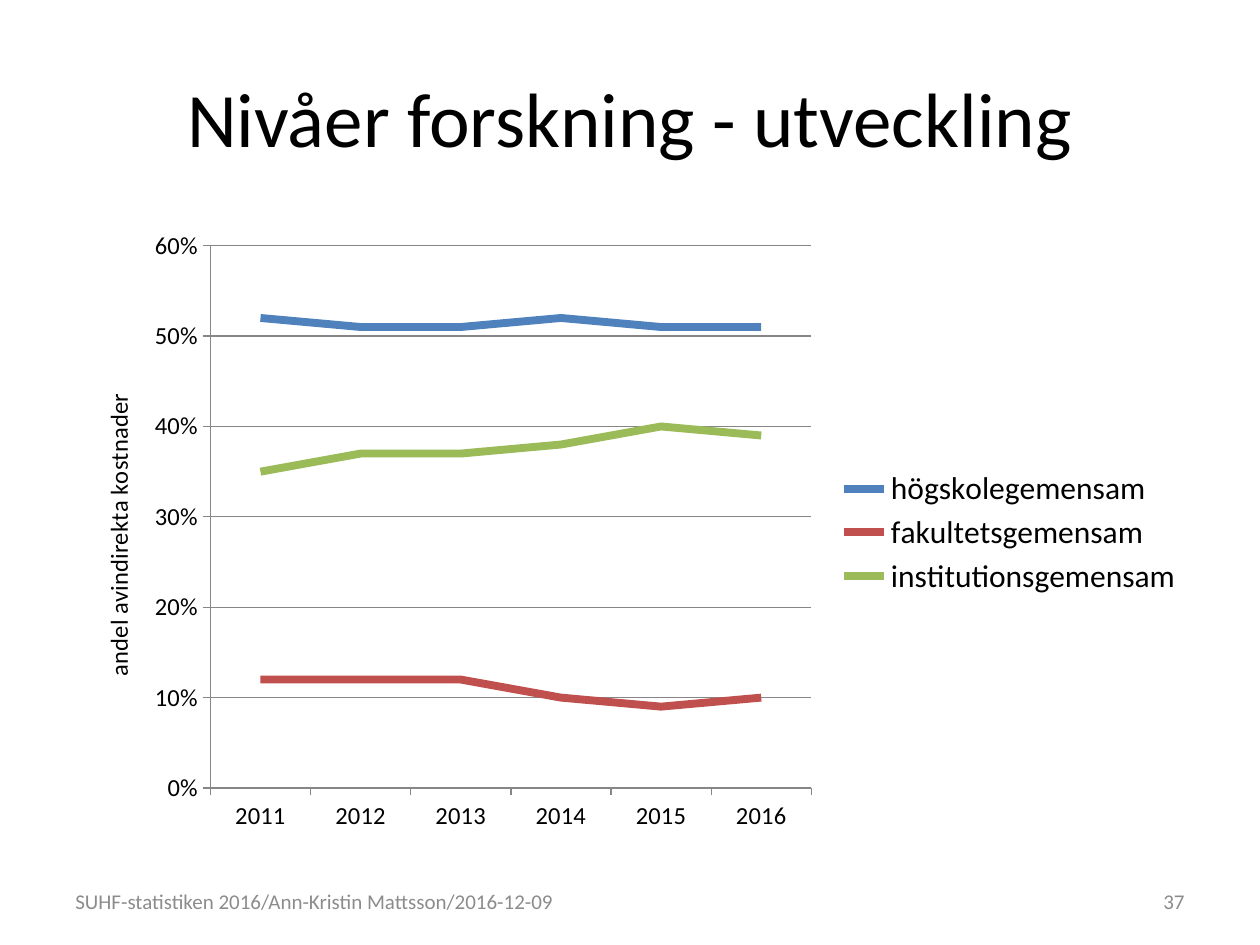
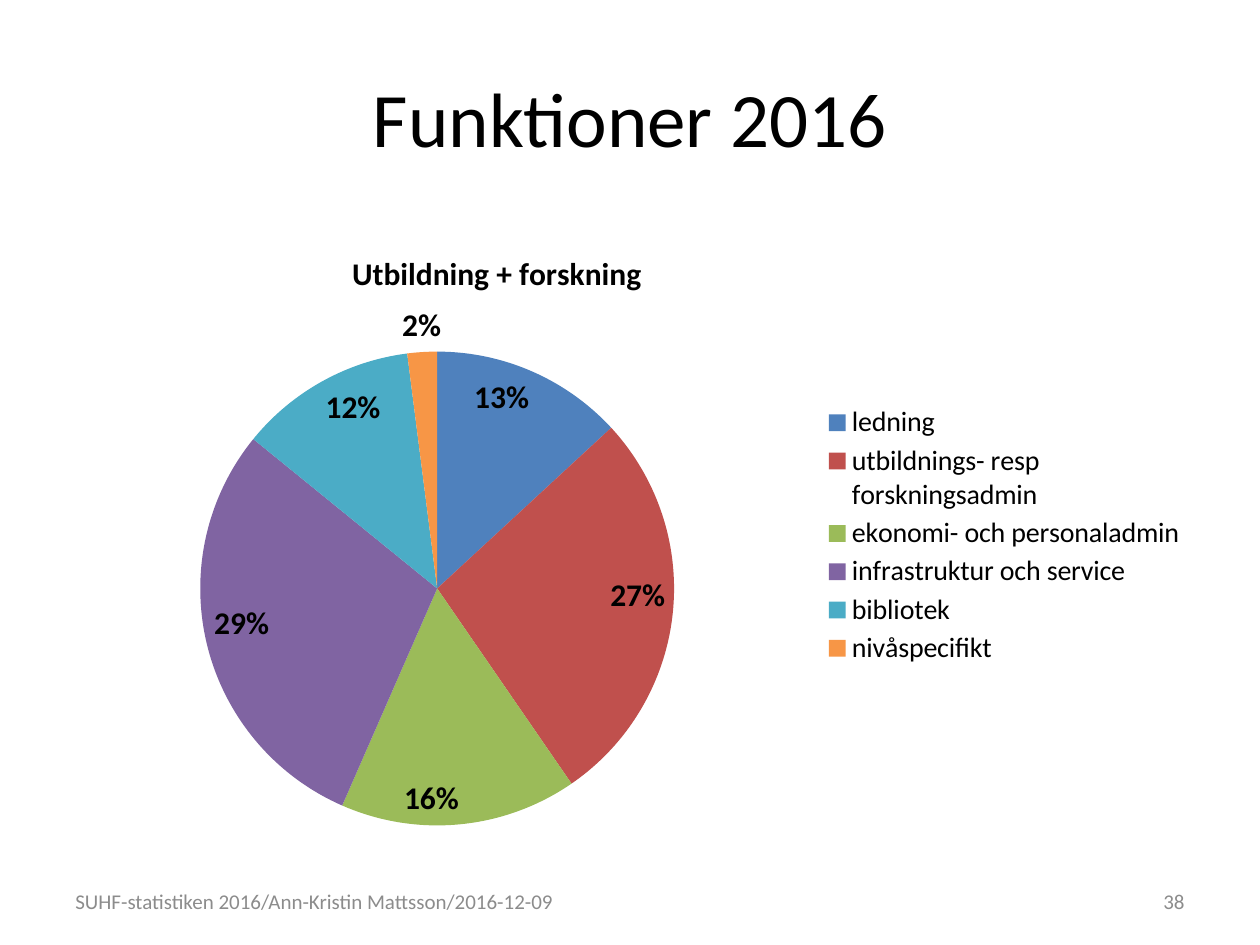
import pptx
import pptx.chart.data
import pptx.dml.color
import pptx.enum.chart
import pptx.enum.text
import pptx.oxml
import pptx.oxml.ns
import pptx.util
from dataclasses import dataclass

Cm, Pt = pptx.util.Cm, pptx.util.Pt
RGB = pptx.dml.color.RGBColor.from_string
XL = pptx.enum.chart
ALIGN = pptx.enum.text.PP_ALIGN


@dataclass(frozen=True)
class Theme:
    font: str = "Calibri"
    text: str = "000000"
    muted: str = "8C8C8C"
    grid: str = "868686"
    accents: tuple = ("4F81BD", "C0504D", "9BBB59", "8064A2", "4BACC6", "F79646")
    title: int = 44
    footer: int = 12
    axis: int = 14
    pie_legend: int = 16
    chart_text: int = 18


THEME = Theme()
FOOTER = "SUHF-statistiken 2016/Ann-Kristin Mattsson/2016-12-09"
FIRST_NUMBER = 37

LEVELS = {
    "title": "Nivåer forskning - utveckling",
    "axis_title": "andel avindirekta kostnader",
    "cats": ["2011", "2012", "2013", "2014", "2015", "2016"],
    "series": [
        ("högskolegemensam", [0.52, 0.51, 0.51, 0.52, 0.51, 0.51]),
        ("fakultetsgemensam", [0.12, 0.12, 0.12, 0.1, 0.09, 0.1]),
        ("institutionsgemensam", [0.35, 0.37, 0.37, 0.38, 0.4, 0.39]),
    ],
}
FUNCTIONS = {
    "title": "Funktioner 2016",
    "chart_title": "Utbildning + forskning",
    "cats": ["ledning", "utbildnings- resp forskningsadmin", "ekonomi- och personaladmin",
             "infrastruktur och service", "bibliotek", "nivåspecifikt"],
    "series": [("Series 1", [13, 27, 16, 29, 12, 2])],
}

WIDTH, HEIGHT = 25.4, 19.05
MARGIN = 1.27
BODY = WIDTH - 2 * MARGIN
NUMBER_WIDTH = 5.92
FOOTER_TOP, FOOTER_HEIGHT = 17.65, 1.02


def add_text(s, text, box, size, color, align):
    tf = s.shapes.add_textbox(*map(Cm, box)).text_frame
    tf.word_wrap = True
    tf.vertical_anchor = pptx.enum.text.MSO_ANCHOR.MIDDLE
    p = tf.paragraphs[0]
    p.text = text
    p.alignment = align
    style_font(p.font, size, color)


def style_font(font, size, color=THEME.text, bold=False):
    font.name = THEME.font
    font.size = Pt(size)
    font.bold = bold
    font.color.rgb = RGB(color)


def add_slide(prs, title, number):
    s = prs.slides.add_slide(prs.slide_layouts[6])
    add_text(s, title, (MARGIN, 0.76, BODY, 3.18), THEME.title, THEME.text, ALIGN.CENTER)
    add_text(s, FOOTER, (MARGIN, FOOTER_TOP, 14.63, FOOTER_HEIGHT),
             THEME.footer, THEME.muted, ALIGN.LEFT)
    add_text(s, str(number), (WIDTH - MARGIN - NUMBER_WIDTH, FOOTER_TOP, NUMBER_WIDTH, FOOTER_HEIGHT),
             THEME.footer, THEME.muted, ALIGN.RIGHT)
    return s


def place(element, index, x, y, w=None, h=None, inner=False):
    for old in element.findall(pptx.oxml.ns.qn("c:layout")):
        element.remove(old)
    parts = [("layoutTarget", "inner")] if inner else []
    parts += [("xMode", "edge"), ("yMode", "edge"), ("x", x), ("y", y)]
    parts += [(tag, v) for tag, v in (("w", w), ("h", h)) if v is not None]
    body = "".join(f'<c:{tag} val="{v}"/>' for tag, v in parts)
    element.insert(index, pptx.oxml.parse_xml(
        f'<c:layout {pptx.oxml.ns.nsdecls("c")}><c:manualLayout>{body}</c:manualLayout></c:layout>'))


def add_chart(s, kind, content, legend_size, plot_box, legend_box):
    data = pptx.chart.data.CategoryChartData(number_format="0%" if kind == XL.XL_CHART_TYPE.LINE else "0")
    data.categories = content["cats"]
    for name, values in content["series"]:
        data.add_series(name, values)
    chart = s.shapes.add_chart(kind, Cm(MARGIN), Cm(4.45), Cm(BODY), Cm(12.57), data).chart
    style_font(chart.font, 10)
    chart.has_title = False
    chart.has_legend = True
    chart.legend.position = XL.XL_LEGEND_POSITION.RIGHT
    chart.legend.include_in_layout = False
    style_font(chart.legend.font, legend_size)
    place(chart.legend._element, 1, *legend_box)
    place(chart._chartSpace.chart.plotArea, 0, *plot_box, inner=True)
    return chart


def set_title(title, text, size, bold, x, y):
    p = title.text_frame.paragraphs[0]
    p.text = text
    style_font(p.font, size, bold=bold)
    place(title._element, 1, x, y)


def style_line(line, width, color):
    line.width = Pt(width)
    line.color.rgb = RGB(color)


def add_levels(s):
    chart = add_chart(s, XL.XL_CHART_TYPE.LINE, LEVELS, THEME.chart_text,
                      (0.13, 0.04, 0.53, 0.87), (0.68, 0.39, 0.31, 0.22))
    for axis in (chart.category_axis, chart.value_axis):
        axis.major_tick_mark = XL.XL_TICK_MARK.OUTSIDE
        axis.minor_tick_mark = XL.XL_TICK_MARK.NONE
        style_font(axis.tick_labels.font, THEME.axis)
        style_line(axis.format.line, 0.75, THEME.grid)
    axis = chart.value_axis
    axis.minimum_scale, axis.maximum_scale, axis.major_unit = 0, 0.6, 0.1
    axis.tick_labels.number_format = "0%"
    axis.tick_labels.number_format_is_linked = False
    axis.has_major_gridlines = True
    style_line(axis.major_gridlines.format.line, 0.75, THEME.grid)
    set_title(axis.axis_title, LEVELS["axis_title"], THEME.axis, False, 0.03, 0.27)
    for series, color in zip(chart.series, THEME.accents):
        series.smooth = False
        series.marker.style = XL.XL_MARKER_STYLE.NONE
        style_line(series.format.line, 4.5, color)


def add_functions(s):
    chart = add_chart(s, XL.XL_CHART_TYPE.PIE, FUNCTIONS, THEME.pie_legend,
                      (0.12, 0.21, 0.42, 0.76), (0.67, 0.29, 0.32, 0.43))
    chart.has_title = True
    set_title(chart.chart_title, FUNCTIONS["chart_title"], THEME.chart_text, True, 0.25, 0.04)
    chart.plots[0].vary_by_categories = True
    series = chart.series[0]
    for i, color in enumerate(THEME.accents):
        fill = series.points[i].format.fill
        fill.solid()
        fill.fore_color.rgb = RGB(color)
    labels = series.data_labels
    labels.show_value = False
    labels.show_percentage = True
    labels.number_format = "0%"
    labels.number_format_is_linked = False
    labels.position = XL.XL_LABEL_POSITION.INSIDE_END
    style_font(labels.font, THEME.chart_text, bold=True)
    smallest = series.points[len(FUNCTIONS["cats"]) - 1].data_label
    style_font(smallest.font, THEME.chart_text, bold=True)
    smallest.position = XL.XL_LABEL_POSITION.OUTSIDE_END
    for tag, shown in (("showVal", "0"), ("showPercent", "1")):
        labels._element.find(f"c:dLbl/c:{tag}", pptx.oxml.ns._nsmap).set("val", shown)


def main():
    prs = pptx.Presentation()
    prs.slide_width, prs.slide_height = Cm(WIDTH), Cm(HEIGHT)
    pages = [(LEVELS, add_levels), (FUNCTIONS, add_functions)]
    for number, (content, draw) in enumerate(pages, FIRST_NUMBER):
        draw(add_slide(prs, content["title"], number))
    prs.save("out.pptx")


if __name__ == "__main__":
    main()
